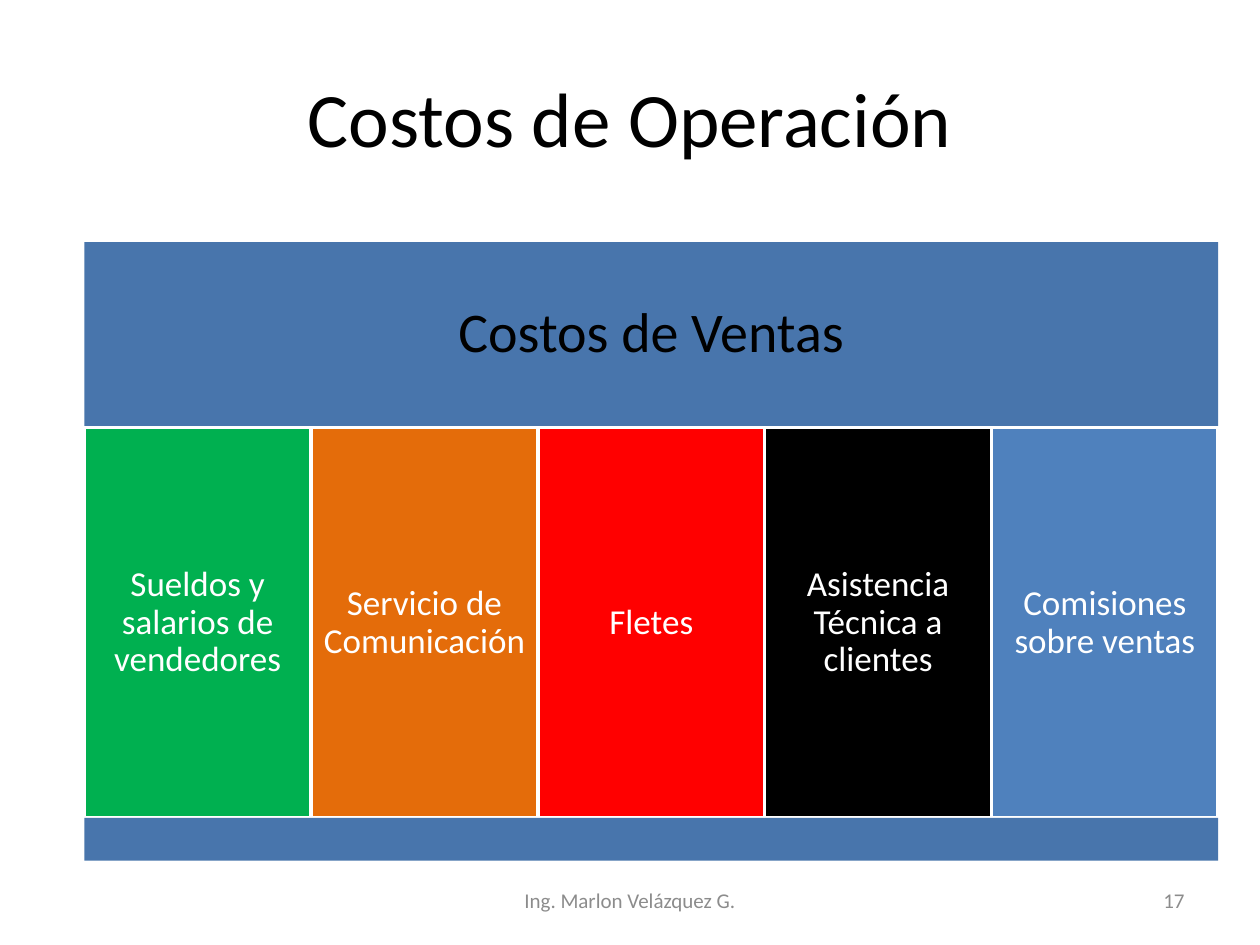
import pptx
import pptx.dml.color
import pptx.enum.shapes
import pptx.enum.text
import pptx.util
from pptx.dml.color import RGBColor
from pptx.util import Cm

FONT = "Calibri"
BLACK = RGBColor(0x00, 0x00, 0x00)
WHITE = RGBColor(0xFF, 0xFF, 0xFF)
GRAY = RGBColor(0x8C, 0x8C, 0x8C)
BAND_BLUE = RGBColor(0x48, 0x75, 0xAC)
GREEN = RGBColor(0x00, 0xB0, 0x50)
ORANGE = RGBColor(0xE4, 0x6C, 0x0A)
RED = RGBColor(0xFF, 0x00, 0x00)
BLUE = RGBColor(0x4F, 0x81, 0xBD)

LEFT, WIDTH = 1.7, 22.86
HEADER_TOP, COLUMN_TOP, BASE_TOP, BASE_BOTTOM = 4.88, 8.62, 16.49, 17.35
COSTS = [
    ("Sueldos y salarios de vendedores", GREEN),
    ("Servicio de Comunicación", ORANGE),
    ("Fletes", RED),
    ("Asistencia Técnica a clientes", BLACK),
    ("Comisiones sobre ventas", BLUE),
]
ALIGN = pptx.enum.text.PP_ALIGN


def write_text(shape, text, size, color, align=ALIGN.CENTER, spacing=None):
    frame = shape.text_frame
    frame.word_wrap = True
    frame.vertical_anchor = pptx.enum.text.MSO_ANCHOR.MIDDLE
    para = frame.paragraphs[0]
    para.text = text
    para.alignment = align
    para.line_spacing = spacing
    para.font.name = FONT
    para.font.size = pptx.util.Pt(size)
    para.font.color.rgb = color


def add_title(slide, text):
    title = slide.shapes.title
    title.left, title.top = Cm(1.27), Cm(0.76)
    title.width, title.height = Cm(22.86), Cm(3.18)
    write_text(title, text, 44, BLACK)


def add_block(slide, left, top, width, bottom, fill):
    block = slide.shapes.add_shape(
        pptx.enum.shapes.MSO_SHAPE.RECTANGLE,
        Cm(left), Cm(top), Cm(width), Cm(bottom - top))
    block.shadow.inherit = False
    block.fill.solid()
    block.fill.fore_color.rgb = fill
    block.line.fill.background()
    return block


def set_margins(block, margin):
    frame = block.text_frame
    frame.margin_left = frame.margin_right = Cm(margin)
    frame.margin_top = frame.margin_bottom = Cm(margin)


def add_header(slide, text):
    header = add_block(slide, LEFT, HEADER_TOP, WIDTH, COLUMN_TOP, BAND_BLUE)
    set_margins(header, 0.33)
    write_text(header, text, 32, BLACK, spacing=0.9)


def add_cost_columns(slide):
    width = WIDTH / len(COSTS)
    for index, (text, fill) in enumerate(COSTS):
        column = add_block(slide, LEFT + index * width, COLUMN_TOP,
                           width, BASE_TOP, fill)
        column.line.color.rgb = WHITE
        column.line.width = pptx.util.Pt(2)
        set_margins(column, 0.2)
        write_text(column, text, 20, WHITE, spacing=0.9)


def add_footer(slide, text, left, width, align):
    box = slide.shapes.add_textbox(Cm(left), Cm(17.65), Cm(width), Cm(1.01))
    write_text(box, text, 12, GRAY, align)


def main():
    deck = pptx.Presentation()
    deck.slide_width, deck.slide_height = Cm(25.4), Cm(19.05)
    slide = deck.slides.add_slide(deck.slide_layouts.get_by_name("Title Only"))
    add_title(slide, "Costos de Operación")
    add_header(slide, "Costos de Ventas")
    add_cost_columns(slide)
    add_block(slide, LEFT, BASE_TOP, WIDTH, BASE_BOTTOM, BAND_BLUE)
    add_footer(slide, "Ing. Marlon Velázquez G.", 8.68, 8.04, ALIGN.CENTER)
    add_footer(slide, "17", 18.2, 5.93, ALIGN.RIGHT)
    deck.save("out.pptx")


if __name__ == "__main__":
    main()
